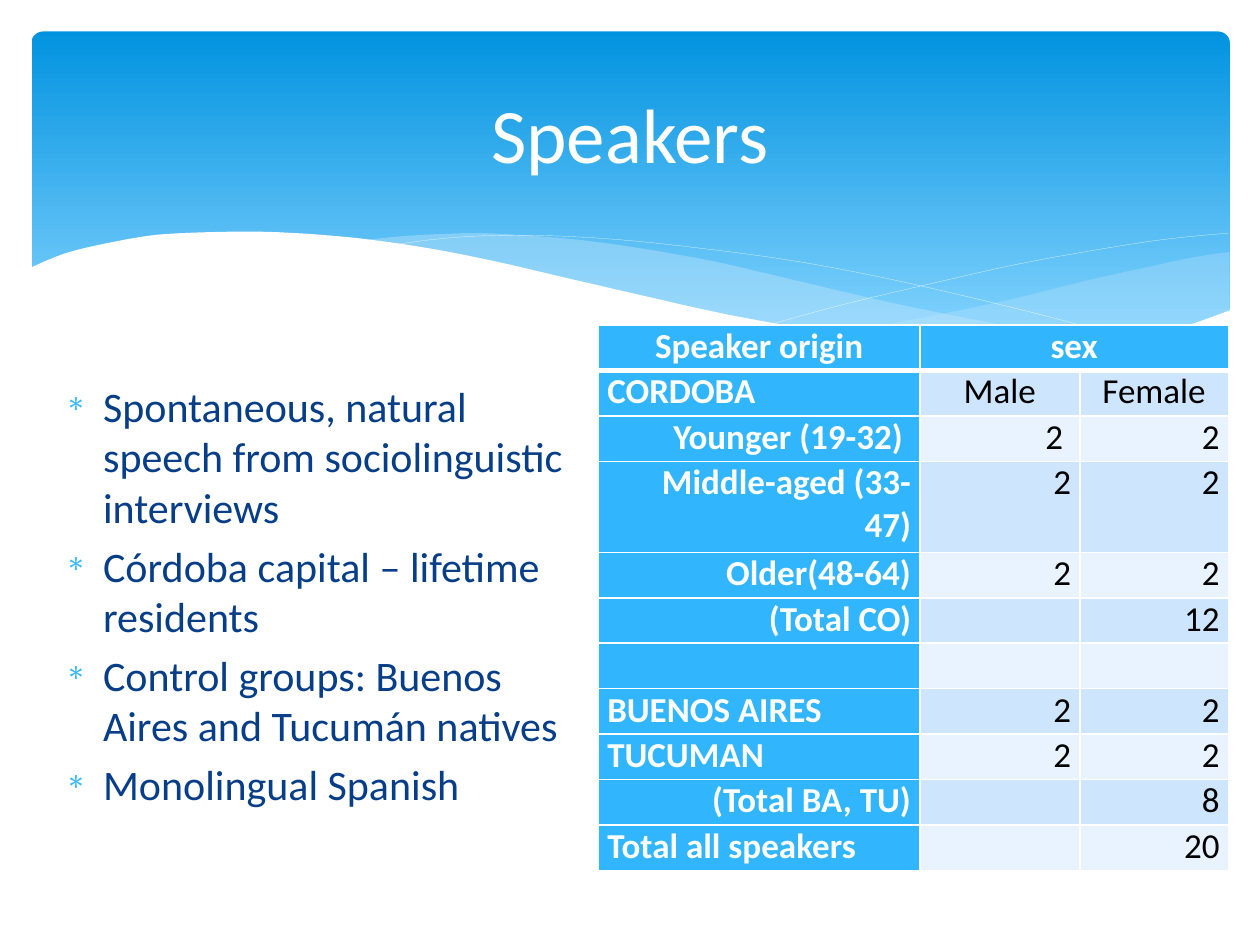
"""Builds the "Speakers" slide: wave banner, bullet list and speaker table."""
import itertools
from dataclasses import dataclass
from typing import Optional

import lxml.etree
import pptx
import pptx.dml.color
import pptx.enum.shapes
import pptx.enum.text
import pptx.oxml
import pptx.oxml.ns
import pptx.util

Inches = pptx.util.Inches
Pt = pptx.util.Pt
qn = pptx.oxml.ns.qn
ALIGN = pptx.enum.text.PP_ALIGN
ANCHOR = pptx.enum.text.MSO_ANCHOR
FONT = "Calibri"
COLORS = {
    "white": "FFFFFF", "black": "000000", "navy": "073E87", "accent": "31B6FD",
    "top": "0293E0", "bottom": "83D3FE", "mist": "C6E7FC",
    "band_dark": "CEE5FE", "band_light": "E8F3FF",
}


@dataclass
class Wave:
    """Smooth curves joined in order, either filled and closed or drawn as a line."""
    curves: list
    fill: Optional[str] = None
    alpha: int = 100


@dataclass
class Row:
    """One table row: label, its alignment, the two sex columns and its line count."""
    label: str
    align: ALIGN
    male: str
    female: str
    lines: int = 1


WAVES = [
    Wave([
        [(9.76, 2), (9.48, 2.04), (9.06, 2.13), (8.61, 2.23), (8.05, 2.37),
         (7.53, 2.48), (7.06, 2.57), (6.61, 2.65)],
        [(6.61, 2.65), (7.05, 2.71), (7.57, 2.76), (8.03, 2.78), (8.54, 2.76),
         (8.97, 2.7), (9.35, 2.62), (9.76, 2.47)],
    ], "mist", 29),
    Wave([
        [(8.93, 2.73), (8.37, 2.65), (7.75, 2.54), (7.06, 2.4), (6.29, 2.22),
         (5.69, 2.08), (5.14, 1.98), (4.65, 1.91), (4.2, 1.87), (3.8, 1.85),
         (3.44, 1.86), (3.13, 1.88), (2.86, 1.91)],
        [(2.86, 1.91), (3.42, 1.99), (4.04, 2.11), (4.49, 2.22), (5.3, 2.4),
         (6.01, 2.55), (6.65, 2.66), (7.22, 2.74), (7.73, 2.77), (8.18, 2.78),
         (8.57, 2.77), (8.93, 2.73)],
    ], "mist", 40),
    Wave([[(3.09, 1.95), (3.44, 1.9), (3.87, 1.87), (4.33, 1.87), (4.89, 1.9),
           (5.56, 1.97), (6.36, 2.08), (7.27, 2.26), (8.31, 2.51), (9.07, 2.72)]]),
    Wave([[(6.13, 2.57), (6.72, 2.41), (7.48, 2.23), (8.06, 2.1), (8.66, 1.99),
           (9.24, 1.9), (9.75, 1.85)]]),
    Wave([
        [(9.77, 2.46), (9.4, 2.59), (8.99, 2.69), (8.5, 2.75), (8.09, 2.77),
         (7.61, 2.75), (7.08, 2.7), (6.48, 2.62), (5.79, 2.5), (5.03, 2.33),
         (4.47, 2.2), (3.91, 2.07), (3.4, 1.97), (2.92, 1.9), (2.5, 1.86),
         (2.11, 1.84), (1.77, 1.84), (1.46, 1.85), (1.19, 1.87), (0.85, 1.93),
         (0.52, 2.01), (0.23, 2.13)],
        [(0.23, 3.29), (9.77, 3.29)],
    ], "white"),
]
BULLETS = [
    "Spontaneous, natural speech from sociolinguistic interviews",
    "Córdoba capital – lifetime residents",
    "Control groups: Buenos Aires and Tucumán natives",
    "Monolingual Spanish",
]
ROWS = [
    Row("Speaker origin", ALIGN.CENTER, "sex", ""),
    Row("CORDOBA", ALIGN.JUSTIFY, "Male", "Female"),
    Row("Younger (19-32) ", ALIGN.RIGHT, "2 ", "2"),
    Row("Middle-aged (33-47)", ALIGN.RIGHT, "2", "2", 2),
    Row("Older(48-64)", ALIGN.RIGHT, "2", "2"),
    Row("(Total CO)", ALIGN.RIGHT, "", "12"),
    Row("", ALIGN.RIGHT, "", ""),
    Row("BUENOS AIRES", ALIGN.JUSTIFY, "2", "2"),
    Row("TUCUMAN", ALIGN.JUSTIFY, "2", "2"),
    Row("(Total BA, TU)", ALIGN.RIGHT, "", "8"),
    Row("Total all speakers", ALIGN.JUSTIFY, "", "20"),
]
COL_WIDTHS = [2.55, 1.27, 1.18]
TABLE_HEIGHT = 4.33
UNITS_PER_INCH = 1000


def rgb(name: str) -> pptx.dml.color.RGBColor:
    """Look up a named colour."""
    return pptx.dml.color.RGBColor.from_string(COLORS[name])


def write(p, text: str, *, size=20, color="black", bold=False, align=None) -> None:
    """Put one formatted run into a paragraph."""
    p.alignment = align
    if text:
        r = p.add_run()
        r.text = text
        r.font.name, r.font.size, r.font.bold = FONT, Pt(size), bold
        r.font.color.rgb = rgb(color)


def add_text_frame(s, left: float, top: float, width: float, height: float):
    """Add a wrapping text box and return its frame."""
    sp = s.shapes.add_textbox(Inches(left), Inches(top), Inches(width), Inches(height))
    sp.text_frame.word_wrap = True
    return sp.text_frame


def smooth(points: list, steps: int = 4) -> list:
    """Interpolate points with a Catmull-Rom spline; a pair stays straight."""
    if len(points) < 3:
        return points
    padded = [points[0], *points, points[-1]]
    curve = [points[0]]
    for quad in zip(padded, padded[1:], padded[2:], padded[3:]):
        for t in (i / steps for i in range(1, steps + 1)):
            curve.append(tuple(
                b + t * (c - a) / 2 + t * t * (2 * a - 5 * b + 4 * c - d) / 2
                + t ** 3 * (3 * b - a - 3 * c + d) / 2
                for a, b, c, d in zip(*quad)))
    return curve


def add_wave(s, wave: Wave) -> None:
    """Draw one wave of the banner."""
    points = [(x * UNITS_PER_INCH, y * UNITS_PER_INCH)
              for x, y in itertools.chain.from_iterable(map(smooth, wave.curves))]
    builder = s.shapes.build_freeform(*points[0], scale=Inches(1) / UNITS_PER_INCH)
    builder.add_line_segments(points[1:], close=wave.fill is not None)
    sp = builder.convert_to_shape()
    sp.shadow.inherit = False
    if wave.fill is None:
        sp.fill.background()
        sp.line.color.rgb = rgb("white")
        sp.line.width = Pt(0.1)
        return
    sp.line.fill.background()
    sp.fill.solid()
    sp.fill.fore_color.rgb = rgb(wave.fill)
    if wave.alpha < 100:
        clr = sp.fill._xPr.find(".//" + qn("a:srgbClr"))
        lxml.etree.SubElement(clr, qn("a:alpha"), val=str(wave.alpha * 1000))


def add_banner(s) -> None:
    """Draw the gradient panel and the waves over it."""
    sp = s.shapes.add_shape(pptx.enum.shapes.MSO_SHAPE.ROUNDED_RECTANGLE,
                            Inches(0.25), Inches(0.25), Inches(9.51), Inches(2.7))
    sp.adjustments[0] = 0.034
    sp.shadow.inherit = False
    sp.line.fill.background()
    sp.fill.gradient()
    sp.fill.gradient_angle = 270
    for stop, color, position in zip(sp.fill.gradient_stops, ("top", "bottom"), (0, 0.9)):
        stop.color.rgb, stop.position = rgb(color), position
    for wave in WAVES:
        add_wave(s, wave)


def add_bullets(s) -> None:
    """Write the bullet list."""
    tf = add_text_frame(s, 0.42, 2.5, 4.17, 4.2)
    tf.margin_top = Inches(0.52)
    for i, text in enumerate(BULLETS):
        p = tf.add_paragraph() if i else tf.paragraphs[0]
        write(p, text, size=24, color="navy")
        p.space_before = Pt(4.8)
        pPr = p._p.get_or_add_pPr()
        pPr.set("marL", str(Inches(0.3)))
        pPr.set("indent", str(Inches(-0.3)))
        clr = lxml.etree.SubElement(pPr, qn("a:buClr"))
        lxml.etree.SubElement(clr, qn("a:srgbClr"), val=COLORS["accent"])
        lxml.etree.SubElement(pPr, qn("a:buSzPct"), val="70000")
        lxml.etree.SubElement(pPr, qn("a:buChar"), char="∗")


def style_cell(cell, fill: str, bottom: int) -> None:
    """Set the fill, margins and white borders of a cell."""
    cell.fill.solid()
    cell.fill.fore_color.rgb = rgb(fill)
    cell.margin_left = cell.margin_right = Inches(0.07)
    cell.margin_top = cell.margin_bottom = 0
    tcPr = cell._tc.get_or_add_tcPr()
    for i, (side, width) in enumerate(zip("LRTB", (1, 1, 1, bottom))):
        ln = pptx.oxml.parse_xml(
            f'<a:ln{side} {pptx.oxml.ns.nsdecls("a")} w="{Pt(width)}"><a:solidFill>'
            f'<a:srgbClr val="{COLORS["white"]}"/></a:solidFill></a:ln{side}>')
        tcPr.insert(i, ln)


def add_speaker_table(s) -> None:
    """Build the table of speakers by origin and sex."""
    line_height = TABLE_HEIGHT / sum(row.lines for row in ROWS)
    table = s.shapes.add_table(len(ROWS), len(COL_WIDTHS), Inches(4.75), Inches(2.58),
                               Inches(sum(COL_WIDTHS)), Inches(TABLE_HEIGHT)).table
    for col, width in zip(table.columns, COL_WIDTHS):
        col.width = Inches(width)
    for i, row in enumerate(ROWS):
        table.rows[i].height = Inches(row.lines * line_height)
        for j, text in enumerate((row.label, row.male, row.female)):
            head = i == 0 or j == 0
            band = "band_dark" if i % 2 else "band_light"
            align = row.align if j == 0 else ALIGN.CENTER if i < 2 else ALIGN.RIGHT
            cell = table.cell(i, j)
            style_cell(cell, "accent" if head else band, 3 if i == 0 else 1)
            if j == 0 and align == ALIGN.RIGHT:
                cell.margin_left = Inches(0.37)
            write(cell.text_frame.paragraphs[0], text, bold=head, align=align,
                  color="white" if head else "black")
    table.cell(0, 1).merge(table.cell(0, 2))


def main() -> None:
    """Assemble and save the slide."""
    prs = pptx.Presentation()
    prs.slide_width, prs.slide_height = Inches(10), Inches(7.5)
    s = prs.slides.add_slide(prs.slide_layouts[6])
    add_banner(s)
    tf = add_text_frame(s, 0.5, 0.37, 9, 1.37)
    tf.vertical_anchor = ANCHOR.MIDDLE
    write(tf.paragraphs[0], "Speakers", size=44, color="white", align=ALIGN.CENTER)
    add_bullets(s)
    add_speaker_table(s)
    prs.save("out.pptx")


if __name__ == "__main__":
    main()
